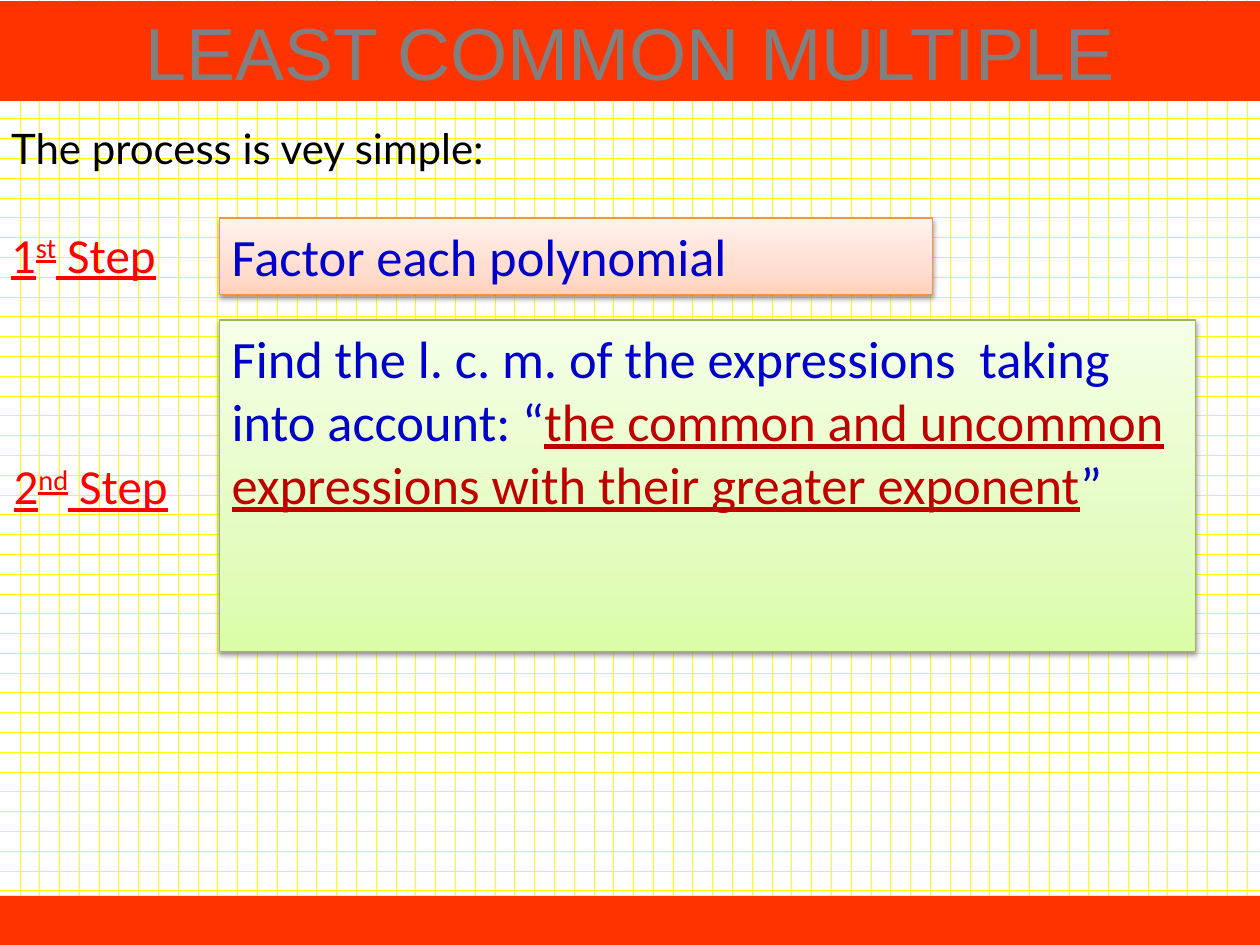
from dataclasses import dataclass

from lxml.etree import SubElement
from pptx import Presentation
from pptx.dml.color import RGBColor
from pptx.enum.dml import MSO_PATTERN
from pptx.enum.shapes import MSO_SHAPE
from pptx.enum.text import MSO_ANCHOR, PP_ALIGN
from pptx.oxml.ns import qn
from pptx.shapes.autoshape import Shape
from pptx.slide import Slide
from pptx.util import Inches, Pt

WHITE = RGBColor(0xFF, 0xFF, 0xFF)
YELLOW = RGBColor(0xFF, 0xFF, 0x00)
ORANGE_RED = RGBColor(0xFF, 0x33, 0x00)
GRAY = RGBColor(0x80, 0x80, 0x80)
BLACK = RGBColor(0x00, 0x00, 0x00)
RED = RGBColor(0xFF, 0x00, 0x00)
BLUE = RGBColor(0x00, 0x00, 0xCC)
DARK_RED = RGBColor(0xC0, 0x00, 0x00)
ORANGE_EDGE = RGBColor(0xF6, 0x92, 0x40)
GREEN_EDGE = RGBColor(0x98, 0xB9, 0x55)
PEACH = (RGBColor(0xFF, 0xD2, 0xBD), RGBColor(0xFF, 0xDE, 0xD0), RGBColor(0xFF, 0xF2, 0xED))
LIME = (RGBColor(0xDA, 0xFD, 0xA7), RGBColor(0xE4, 0xFC, 0xC2), RGBColor(0xF5, 0xFF, 0xE7))
STOPS = (0, 35, 100)


@dataclass(frozen=True)
class Area:
    left: float
    top: float
    width: float
    height: float

    def lengths(self) -> tuple:
        return Inches(self.left), Inches(self.top), Inches(self.width), Inches(self.height)


@dataclass(frozen=True)
class Span:
    text: str
    color: RGBColor
    underline: bool = False
    raised: bool = False


@dataclass(frozen=True)
class Step:
    number: str
    suffix: str
    label_area: Area
    card_area: Area
    gradient: tuple[RGBColor, ...]
    edge: RGBColor
    spans: tuple[Span, ...]


STEPS = (
    Step("1", "st", Area(-0.01, 1.73, 1.66, 0.57), Area(1.74, 1.73, 5.66, 0.61),
         PEACH, ORANGE_EDGE, (Span("Factor each polynomial", BLUE),)),
    Step("2", "nd", Area(0.01, 3.57, 1.74, 0.57), Area(1.74, 2.54, 7.75, 2.63),
         LIME, GREEN_EDGE, (
             Span("Find the l. c. m. of the expressions  taking into account: “", BLUE),
             Span("the common and uncommon expressions with their greater exponent",
                  DARK_RED, underline=True),
             Span("”", BLUE))),
)


def write(shape: Shape, spans: tuple[Span, ...], font: str, size: int) -> None:
    frame = shape.text_frame
    frame.word_wrap = True
    para = frame.paragraphs[0]
    para.alignment = PP_ALIGN.LEFT
    para.font.name = font
    para.font.size = Pt(size)
    for span in spans:
        run = para.add_run()
        run.text = span.text
        run.font.name = font
        run.font.size = Pt(size)
        run.font.color.rgb = span.color
        run.font.underline = span.underline
        if span.raised:
            run._r.get_or_add_rPr().set("baseline", "30000")


def add_text(page: Slide, area: Area, spans: tuple[Span, ...], font: str, size: int) -> None:
    write(page.shapes.add_textbox(*area.lengths()), spans, font, size)


def add_rectangle(page: Slide, area: Area) -> Shape:
    shape = page.shapes.add_shape(MSO_SHAPE.RECTANGLE, *area.lengths())
    shape.shadow.inherit = False
    return shape


def add_band(page: Slide, area: Area) -> Shape:
    band = add_rectangle(page, area)
    band.fill.solid()
    band.fill.fore_color.rgb = ORANGE_RED
    band.line.fill.background()
    return band


def add_title(page: Slide, area: Area, text: str) -> None:
    band = add_band(page, area)
    write(band, (Span(text, GRAY),), "Arial", 42)
    band.text_frame.vertical_anchor = MSO_ANCHOR.MIDDLE
    para = band.text_frame.paragraphs[0]
    para.alignment = PP_ALIGN.CENTER
    properties = para.runs[0]._r.get_or_add_rPr()
    outline = SubElement(properties, qn("a:ln"), w=str(Pt(0.75)))
    fill = SubElement(outline, qn("a:solidFill"))
    SubElement(fill, qn("a:srgbClr"), val=str(WHITE))
    properties.insert(0, outline)


def shade(shape: Shape, colors: tuple[RGBColor, ...]) -> None:
    shape.fill.gradient()
    shape.fill.gradient_angle = 90
    stops = shape._element.spPr.find(qn("a:gradFill")).find(qn("a:gsLst"))
    for stop in list(stops):
        stops.remove(stop)
    for position, color in zip(STOPS, colors):
        stop = SubElement(stops, qn("a:gs"), pos=str(position * 1000))
        SubElement(stop, qn("a:srgbClr"), val=str(color))


def add_shadow(shape: Shape) -> None:
    effects = shape._element.spPr.find(qn("a:effectLst"))
    shadow = SubElement(effects, qn("a:outerShdw"), blurRad=str(Pt(3.1)),
                        dist=str(Pt(1.6)), dir="5400000", rotWithShape="0")
    color = SubElement(shadow, qn("a:srgbClr"), val=str(BLACK))
    SubElement(color, qn("a:alpha"), val="38000")


def add_step(page: Slide, step: Step) -> None:
    label = (Span(step.number, RED, underline=True),
             Span(step.suffix, RED, underline=True, raised=True),
             Span(" Step", RED, underline=True))
    add_text(page, step.label_area, label, "Calibri", 28)
    card = add_rectangle(page, step.card_area)
    shade(card, step.gradient)
    card.line.color.rgb = step.edge
    card.line.width = Pt(0.75)
    add_shadow(card)
    write(card, step.spans, "Calibri", 30)
    card.text_frame.vertical_anchor = MSO_ANCHOR.TOP


def main() -> None:
    deck = Presentation()
    deck.slide_width, deck.slide_height = Inches(10), Inches(7.5)
    page = deck.slides.add_slide(deck.slide_layouts[6])
    backdrop = page.background.fill
    backdrop.patterned()
    backdrop.pattern = MSO_PATTERN.DOTTED_GRID
    backdrop.fore_color.rgb = YELLOW
    backdrop.back_color.rgb = WHITE

    add_band(page, Area(0, 7.11, 10, 0.39))
    add_title(page, Area(0, 0.01, 10, 0.79), "LEAST COMMON MULTIPLE")
    add_text(page, Area(-0.01, 0.92, 6.1, 0.5),
             (Span("The process is vey simple:", BLACK),), "Lato", 24)
    for step in STEPS:
        add_step(page, step)
    deck.save("out.pptx")


if __name__ == "__main__":
    main()
